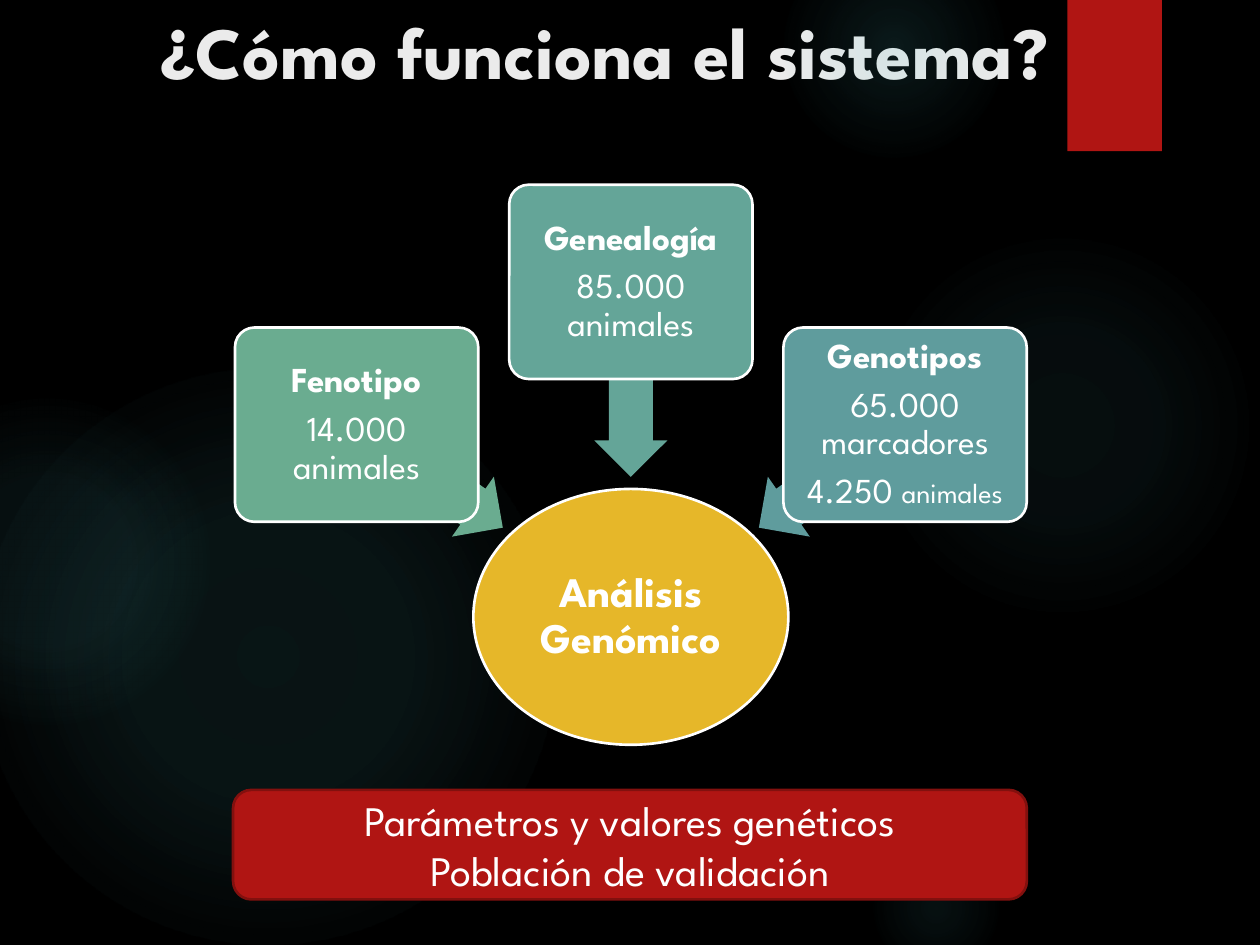
from dataclasses import dataclass

from lxml.etree import SubElement
from pptx import Presentation
from pptx.dml.color import RGBColor
from pptx.enum.shapes import MSO_SHAPE as Preset
from pptx.enum.text import MSO_ANCHOR as Anchor, PP_ALIGN as Align
from pptx.oxml.ns import qn
from pptx.util import Pt

FONT = "League Spartan"
WHITE, RED, GLOW_COLOR = "FFFFFF", "B01513", "50B9C1"


@dataclass
class Glow:
    left: float
    top: float
    size: float
    stops: tuple  # (position %, opacity %)


@dataclass
class Source:
    lines: tuple  # each line is a tuple of (text, size) runs
    color: str
    column: int
    top: float
    arrow_center: tuple
    arrow_length: float
    arrow_angle: float


GLOWS = (
    Glow(496, 132, 222, ((0, 7), (36, 6), (69, 0))),
    Glow(448, -36, 126, ((0, 14), (36, 7), (73, 0))),
    Glow(496, 480, 78, ((0, 9), (36, 5), (66, 0))),
    Glow(-12, 210, 330, ((0, 11), (36, 10), (75, 0))),
    Glow(-66, 228, 186, ((0, 8), (36, 8), (72, 0))),
)

CENTER = 360.5
ARROW_OFFSET = 115
BOX_W, BOX_H, BOX_PITCH = 139, 111, 156.7
SOURCES = (
    Source(((("Fenotipo", 20),), (("14.000 animales", 20),)),
           "6AAC90", -1, 187.2, (CENTER - ARROW_OFFSET, 272.2), 102.2, 215),
    Source(((("Genealogía", 20),), (("85.000 animales", 20),)),
           "64A598", 0, 105.6, (CENTER, 216.7), 111.6, 270),
    Source(((("Genotipos", 20),), (("65.000 marcadores", 20),),
            (("4.250 ", 20), ("animales", 16))),
           "5F9C9D", 1, 187.2, (CENTER + ARROW_OFFSET, 272.2), 102.2, 325),
)


def rgb(value: str) -> RGBColor:
    return RGBColor.from_string(value)


def add_preset(slide, preset, left: float, top: float, width: float, height: float,
               fill: str | None = None, line: str | None = None):
    shape = slide.shapes.add_shape(preset, Pt(left), Pt(top), Pt(width), Pt(height))
    shape.shadow.inherit = False
    if fill:
        shape.fill.solid()
        shape.fill.fore_color.rgb = rgb(fill)
    if line:
        shape.line.color.rgb = rgb(line)
        shape.line.width = Pt(1.5)
    else:
        shape.line.fill.background()
    return shape


def write(shape, lines: tuple, color: str = WHITE, bold_lines: int = 0,
          anchor=Anchor.MIDDLE, inset: float | None = None,
          spacing: float = 1.0, after: float = 0) -> None:
    """Fill a shape with centred lines, the first bold_lines of them in bold."""
    frame = shape.text_frame
    frame.word_wrap = True
    frame.vertical_anchor = anchor
    if inset is not None:
        frame.margin_left = frame.margin_right = Pt(inset)
        frame.margin_top = frame.margin_bottom = Pt(inset)
    for index, line in enumerate(lines):
        paragraph = frame.paragraphs[0] if index == 0 else frame.add_paragraph()
        paragraph.alignment = Align.CENTER
        paragraph.line_spacing = spacing
        paragraph.space_before = Pt(0)
        paragraph.space_after = Pt(after)
        for text, size in line:
            run = paragraph.add_run()
            run.text = text
            run.font.name = FONT
            run.font.size = Pt(size)
            run.font.bold = index < bold_lines
            run.font.color.rgb = rgb(color)


def draw_glow(slide, glow: Glow) -> None:
    shape = add_preset(slide, Preset.OVAL, glow.left, glow.top, glow.size, glow.size)
    # Radial gradient with transparent stops
    gradient = SubElement(shape._element.spPr, qn("a:gradFill"))
    stop_list = SubElement(gradient, qn("a:gsLst"))
    for position, opacity in glow.stops:
        stop = SubElement(stop_list, qn("a:gs"), pos=str(position * 1000))
        color = SubElement(stop, qn("a:srgbClr"), val=GLOW_COLOR)
        SubElement(color, qn("a:alpha"), val=str(opacity * 1000))
    radial = SubElement(gradient, qn("a:path"), path="circle")
    SubElement(radial, qn("a:fillToRect"), l="50000", t="50000", r="50000", b="50000")
    shape._element.spPr.find(qn("a:prstGeom")).addnext(gradient)


def draw_source(slide, source: Source) -> None:
    # Arrow towards the analysis, partly behind its box
    length, thickness = source.arrow_length, 41.8
    x, y = source.arrow_center
    arrow = add_preset(slide, Preset.LEFT_ARROW, x - length / 2, y - thickness / 2,
                       length, thickness, source.color)
    arrow.adjustments[0], arrow.adjustments[1] = 0.6, 0.5
    arrow.rotation = source.arrow_angle
    # Box
    left = CENTER - BOX_W / 2 + source.column * BOX_PITCH
    box = add_preset(slide, Preset.ROUNDED_RECTANGLE, left, source.top,
                     BOX_W, BOX_H, source.color, WHITE)
    box.adjustments[0] = 0.1
    write(box, source.lines, bold_lines=1, inset=3, spacing=0.9, after=6)


def main() -> None:
    deck = Presentation()
    deck.slide_width, deck.slide_height = Pt(720), Pt(540)
    slide = deck.slides.add_slide(deck.slide_layouts[5])

    # Background and decoration
    slide.background.fill.solid()
    slide.background.fill.fore_color.rgb = rgb("000000")
    for glow in GLOWS:
        draw_glow(slide, glow)
    add_preset(slide, Preset.RECTANGLE, 610, 0, 54, 86.4, RED)

    # Title
    title = slide.shapes.title
    title.left, title.top, title.width, title.height = Pt(50.4), Pt(0), Pt(590), Pt(74)
    write(title, ((("¿Cómo funciona el sistema?", 42),),), color="EBEBEB",
          bold_lines=1, anchor=Anchor.TOP)

    # Data sources flowing into the analysis
    analysis = add_preset(slide, Preset.OVAL, CENTER - 90, 279.4, 180, 146.2,
                          "E6B729", WHITE)
    write(analysis, ((("Análisis Genómico", 24),),), bold_lines=1,
          inset=1.5, spacing=0.9, after=7)
    for source in SOURCES:
        draw_source(slide, source)

    # Results
    results = add_preset(slide, Preset.ROUNDED_RECTANGLE, 133.2, 451.4, 453.6, 62.6,
                         RED, "82100E")
    write(results, ((("Parámetros y valores genéticos", 24),),
                    (("Población de validación", 24),)))

    deck.save("out.pptx")


if __name__ == "__main__":
    main()
